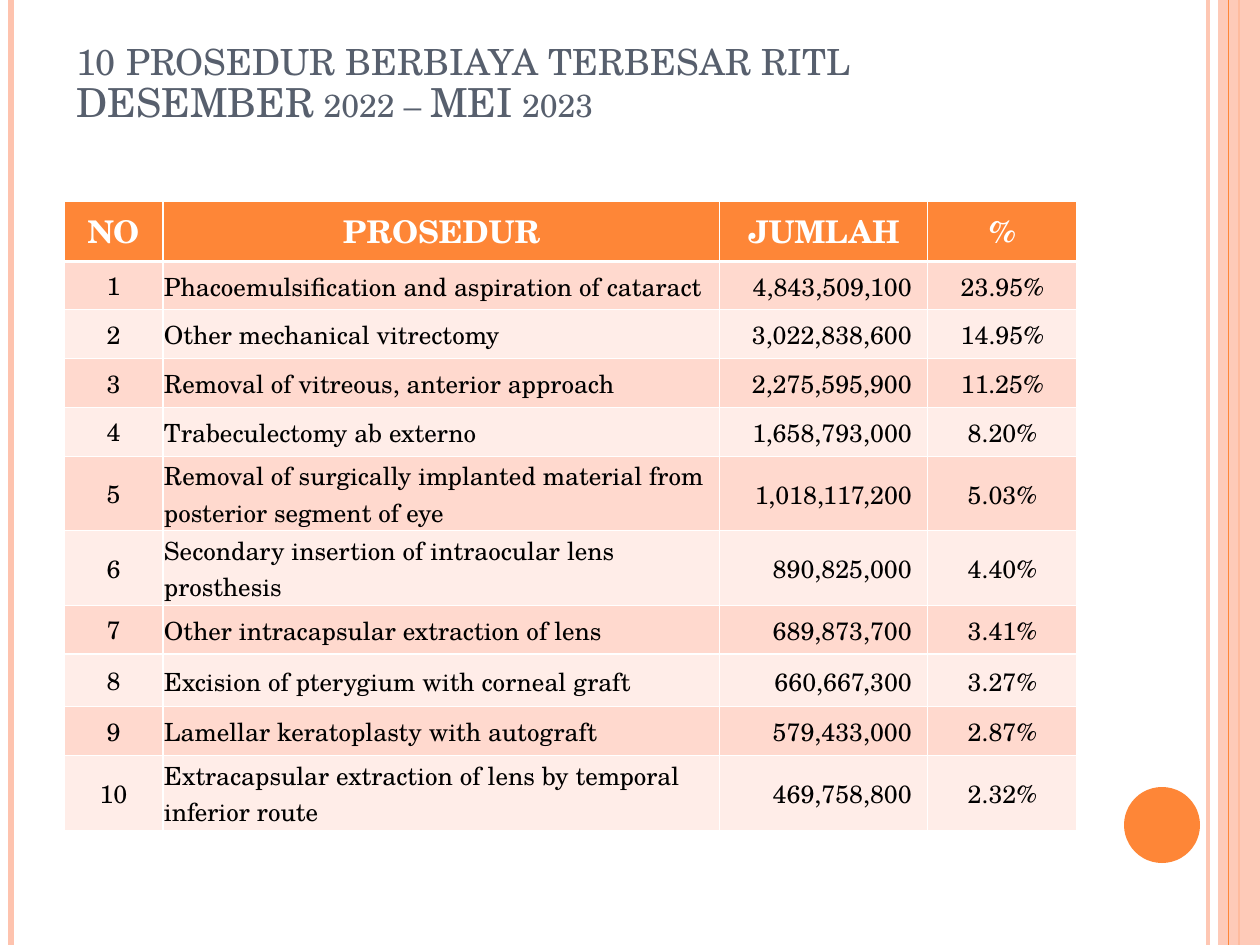
from dataclasses import dataclass

from lxml import etree
from pptx import Presentation
from pptx.dml.color import RGBColor
from pptx.enum.shapes import MSO_CONNECTOR, MSO_SHAPE
from pptx.enum.text import MSO_ANCHOR, MSO_AUTO_SIZE, PP_ALIGN
from pptx.oxml.ns import qn
from pptx.util import Emu, Pt

STRAIGHT = MSO_CONNECTOR.STRAIGHT
RECTANGLE, OVAL = MSO_SHAPE.RECTANGLE, MSO_SHAPE.OVAL
TOP, MIDDLE = MSO_ANCHOR.TOP, MSO_ANCHOR.MIDDLE
LEFT, CENTER, RIGHT = PP_ALIGN.LEFT, PP_ALIGN.CENTER, PP_ALIGN.RIGHT

EMU_PER_PX = 914400 // 90
SLIDE_WIDTH, SLIDE_HEIGHT = 1260, 945
FONT = "TeX Gyre Schola"
COLORS = {
    "orange": "FE8637",
    "peach": "FEC3AE",
    "title": "575F6D",
    "band_dark": "FFD9CE",
    "band_light": "FFEDE8",
    "white": "FFFFFF",
    "black": "000000",
}


@dataclass(frozen=True)
class Stripe:
    x: int
    weight: float
    color: str
    opacity: int = 100


@dataclass(frozen=True)
class Block:
    kind: MSO_SHAPE
    left: int
    top: int
    width: int
    height: int
    color: str
    opacity: int = 100


@dataclass(frozen=True)
class CellStyle:
    size: int
    color: str
    bold: bool
    anchor: MSO_ANCHOR
    align: PP_ALIGN
    insets: tuple[int, int, int, int]  # left, top, right, bottom


WIDE_INSETS = (13, 6, 13, 6)
HEADER_STYLE = CellStyle(25, "white", True, TOP, CENTER, WIDE_INSETS)
BODY_STYLES = [
    CellStyle(20, "black", False, MIDDLE, CENTER, WIDE_INSETS),
    CellStyle(20, "black", False, MIDDLE, LEFT, (1, 1, 1, 0)),
    CellStyle(20, "black", False, MIDDLE, RIGHT, (1, 1, 16, 0)),
    CellStyle(20, "black", False, MIDDLE, CENTER, (1, 1, 1, 0)),
]

BACK_STRIPES = [Stripe(1208, 3, "peach", 93), Stripe(11, 4.5, "peach"),
                Stripe(1239, 1.5, "orange")]
SIDE_BAND = Block(RECTANGLE, 1218, 0, 42, SLIDE_HEIGHT, "peach", 87)
FRONT_STRIPE = Stripe(1228, 0.75, "orange")
DISC = Block(OVAL, 1124, 787, 76, 76, "orange")

TITLE_RUNS = [("10 prosedur berbiaya terbesar ritl ", 36),
              ("DESEMBER 2022 – MEI 2023", 32)]
HEADERS = ("NO", "PROSEDUR", "JUMLAH", "%")
PROCEDURES = [
    ("Phacoemulsification and aspiration of cataract", "4,843,509,100", "23.95%"),
    ("Other mechanical vitrectomy", "3,022,838,600", "14.95%"),
    ("Removal of vitreous, anterior approach", "2,275,595,900", "11.25%"),
    ("Trabeculectomy ab externo", "1,658,793,000", "8.20%"),
    ("Removal of surgically implanted material from posterior segment of eye",
     "1,018,117,200", "5.03%"),
    ("Secondary insertion of intraocular lens prosthesis", "890,825,000", "4.40%"),
    ("Other intracapsular extraction of lens", "689,873,700", "3.41%"),
    ("Excision of pterygium with corneal graft", "660,667,300", "3.27%"),
    ("Lamellar keratoplasty with autograft", "579,433,000", "2.87%"),
    ("Extracapsular extraction of lens by temporal inferior route",
     "469,758,800", "2.32%"),
]
COLUMN_WIDTHS = (99, 557, 208, 149)
HEADER_HEIGHT, ROW_HEIGHT = 51, 46
TALL_ROW, TALL_HEIGHT = 8, 53


def px(length: int) -> Emu:
    return Emu(length * EMU_PER_PX)


def rgb(name: str) -> RGBColor:
    return RGBColor.from_string(COLORS[name])


def set_opacity(shape, percent: int) -> None:
    if percent < 100:
        color = next(shape._element.spPr.iter(qn("a:srgbClr")))
        etree.SubElement(color, qn("a:alpha"), val=str(percent * 1000))


def add_stripe(slide, stripe: Stripe) -> None:
    line = slide.shapes.add_connector(
        STRAIGHT, px(stripe.x), 0, px(stripe.x), px(SLIDE_HEIGHT))
    line.line.color.rgb = rgb(stripe.color)
    line.line.width = Pt(stripe.weight)
    set_opacity(line, stripe.opacity)
    etree.SubElement(line._element.spPr, qn("a:effectLst"))


def add_block(slide, block: Block) -> None:
    shape = slide.shapes.add_shape(
        block.kind, px(block.left), px(block.top), px(block.width), px(block.height))
    shape.shadow.inherit = False
    shape.fill.solid()
    shape.fill.fore_color.rgb = rgb(block.color)
    shape.line.fill.background()
    set_opacity(shape, block.opacity)


def set_insets(target, insets: tuple[int, int, int, int]) -> None:
    (target.margin_left, target.margin_top,
     target.margin_right, target.margin_bottom) = map(px, insets)


def format_title(title) -> None:
    title.left, title.top, title.width, title.height = map(px, (63, 12, 1029, 141))
    frame = title.text_frame
    frame.word_wrap = True
    frame.auto_size = MSO_AUTO_SIZE.NONE
    frame.vertical_anchor = MIDDLE
    set_insets(frame, WIDE_INSETS)
    para = frame.paragraphs[0]
    para.alignment = LEFT
    para.line_spacing = 0.85
    for text, size in TITLE_RUNS:
        span = para.add_run()
        span.text = text
        span.font.name = FONT
        span.font.size = Pt(size)
        span.font.color.rgb = rgb("title")
        span.font._element.set("cap", "small")


def set_borders(cell, bottom_weight: int) -> None:
    properties = cell._tc.get_or_add_tcPr()
    weights = {"a:lnL": 1, "a:lnR": 1, "a:lnT": 1, "a:lnB": bottom_weight}
    for position, (tag, weight) in enumerate(weights.items()):
        border = etree.Element(qn(tag), w=str(Pt(weight)))
        fill = etree.SubElement(border, qn("a:solidFill"))
        etree.SubElement(fill, qn("a:srgbClr"), val=COLORS["white"])
        properties.insert(position, border)


def fill_cell(cell, text: str, style: CellStyle, fill: str, bottom_weight: int) -> None:
    cell.text = text
    cell.vertical_anchor = style.anchor
    set_insets(cell, style.insets)
    cell.fill.solid()
    cell.fill.fore_color.rgb = rgb(fill)
    para = cell.text_frame.paragraphs[0]
    para.alignment = style.align
    para.font.name = FONT
    para.font.size = Pt(style.size)
    para.font.bold = style.bold
    para.font.color.rgb = rgb(style.color)
    set_borders(cell, bottom_weight)


def add_procedure_table(slide) -> None:
    heights = [HEADER_HEIGHT] + [ROW_HEIGHT] * len(PROCEDURES)
    heights[TALL_ROW] = TALL_HEIGHT
    table = slide.shapes.add_table(
        len(heights), len(HEADERS), px(64), px(201),
        px(sum(COLUMN_WIDTHS)), px(sum(heights))).table
    for column, width in zip(table.columns, COLUMN_WIDTHS):
        column.width = px(width)
    for row, height in zip(table.rows, heights):
        row.height = px(height)
    for column, text in enumerate(HEADERS):
        fill_cell(table.cell(0, column), text, HEADER_STYLE, "orange", 3)
    for number, procedure in enumerate(PROCEDURES, start=1):
        band = "band_dark" if number % 2 else "band_light"
        for column, text in enumerate((str(number), *procedure)):
            fill_cell(table.cell(number, column), text, BODY_STYLES[column], band, 1)


def main() -> None:
    deck = Presentation()
    deck.slide_width, deck.slide_height = px(SLIDE_WIDTH), px(SLIDE_HEIGHT)
    page = deck.slides.add_slide(deck.slide_layouts[5])

    # Side decoration
    for stripe in BACK_STRIPES:
        add_stripe(page, stripe)
    add_block(page, SIDE_BAND)
    add_stripe(page, FRONT_STRIPE)
    add_block(page, DISC)

    # Title and table
    format_title(page.shapes.title)
    add_procedure_table(page)
    deck.save("out.pptx")


if __name__ == "__main__":
    main()
